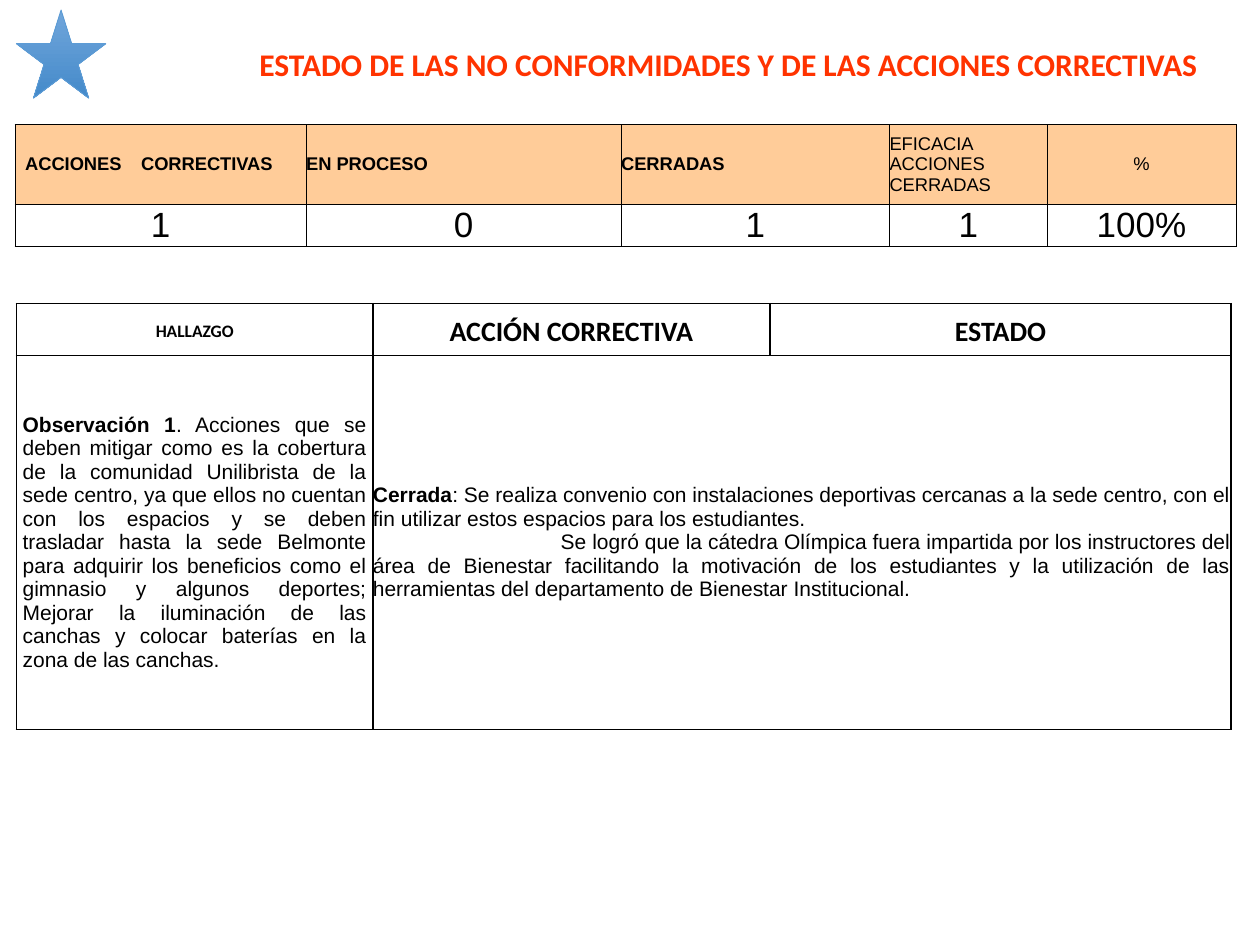
from lxml import etree
from pptx import Presentation
from pptx import util as u
from pptx.dml.color import RGBColor
from pptx.enum import shapes, text
from pptx.oxml.ns import qn

COLORS = {
    "black": "000000", "white": "FFFFFF", "title": "FF3300",
    "header": "FFCC99", "star_top": "71A6DB", "star_bottom": "448ACA",
    "star_line": "5B9BD5",
}
LEFT, CENTER, JUSTIFY = (text.PP_ALIGN.LEFT, text.PP_ALIGN.CENTER,
                         text.PP_ALIGN.JUSTIFY)
MIDDLE = text.MSO_ANCHOR.MIDDLE

SUMMARY = [
    ("ACCIONES\tCORRECTIVAS", "1"),
    ("EN PROCESO", "0"),
    ("CERRADAS", "1"),
    ("EFICACIA ACCIONES CERRADAS", "1"),
    ("%", "100%"),
]
HEADINGS = [("HALLAZGO", 10), ("ACCIÓN CORRECTIVA", 16), ("ESTADO", 16)]
FINDING = (
    ". Acciones que se deben mitigar como es la cobertura de la comunidad "
    "Unilibrista de la sede centro, ya que ellos no cuentan con los espacios "
    "y se deben trasladar hasta la sede Belmonte para adquirir los beneficios "
    "como el gimnasio y algunos deportes; Mejorar la iluminación de las "
    "canchas y colocar baterías en la zona de las canchas.")
CLOSED = (
    ": Se realiza convenio con instalaciones deportivas cercanas a la sede "
    "centro, con el fin utilizar estos espacios para los estudiantes.")
RESULT = (
    "Se logró que la cátedra Olímpica fuera impartida por los instructores "
    "del área de Bienestar facilitando la motivación de los estudiantes y la "
    "utilización de las herramientas del departamento de Bienestar "
    "Institucional.")


def rgb(name):
    return RGBColor.from_string(COLORS[name])


def set_font(font, size, name="Arial", bold=False, color="black"):
    font.size, font.name, font.bold = u.Pt(size), name, bold
    font.color.rgb = rgb(color)


def write(p, content, size, align=LEFT, **style):
    p.text, p.alignment = content, align
    set_font(p.font, size, **style)


def write_labelled(p, label, content, size):
    """Bold label followed by plain text, justified."""
    p.alignment = JUSTIFY
    for part, bold in ((label, True), (content, False)):
        r = p.add_run()
        r.text = part
        set_font(r.font, size, bold=bold)


def add_tab(p, inches):
    tabs = etree.SubElement(p._p.get_or_add_pPr(), qn("a:tabLst"))
    etree.SubElement(tabs, qn("a:tab"), pos=str(u.Inches(inches)), algn="l")


def add_borders(cell, width):
    tcPr = cell._tc.get_or_add_tcPr()
    for i, side in enumerate(("lnL", "lnR", "lnT", "lnB")):
        ln = etree.Element(qn("a:" + side), w=str(u.Pt(width)))
        fill = etree.SubElement(ln, qn("a:solidFill"))
        etree.SubElement(fill, qn("a:srgbClr"), val=COLORS["black"])
        tcPr.insert(i, ln)


def add_grid(s, left, top, cols, rows, border):
    """Plain bordered white table with no cell margins."""
    tbl = s.shapes.add_table(
        len(rows), len(cols), u.Inches(left), u.Inches(top),
        u.Inches(sum(cols)), u.Inches(sum(rows))).table
    for items, attr, sizes in ((tbl.columns, "width", cols),
                               (tbl.rows, "height", rows)):
        for item, size in zip(items, sizes):
            setattr(item, attr, u.Inches(size))
    for cell in tbl.iter_cells():
        cell.margin_left = cell.margin_right = 0
        cell.margin_top = cell.margin_bottom = 0
        cell.vertical_anchor = MIDDLE
        cell.fill.solid()
        cell.fill.fore_color.rgb = rgb("white")
        add_borders(cell, border)
    return tbl


def add_title(s):
    sp = s.shapes.add_textbox(u.Inches(1.96), u.Inches(0.28),
                              u.Inches(8.04), u.Inches(0.5))
    tf = sp.text_frame
    tf.word_wrap, tf.vertical_anchor = True, MIDDLE
    p = tf.paragraphs[0]
    write(p, "ESTADO DE LAS NO CONFORMIDADES Y DE LAS ACCIONES CORRECTIVAS",
          18, name="Calibri", bold=True, color="title")
    p.line_spacing = 0.9


def add_findings(s):
    tbl = add_grid(s, 0.13, 2.41, [2.83, 3.15, 3.66], [0.41, 2.97], 1)
    for c, (heading, size) in enumerate(HEADINGS):
        p = tbl.cell(0, c).text_frame.paragraphs[0]
        write(p, heading, size, CENTER, name="Calibri", bold=True)
        p.line_spacing = 1.15
        if c:
            p.space_after = u.Pt(10)

    finding, status = tbl.cell(1, 0), tbl.cell(1, 1)
    finding.margin_left = finding.margin_right = u.Inches(0.05)
    write_labelled(finding.text_frame.paragraphs[0],
                   "Observación 1", FINDING, 12)

    status.merge(tbl.cell(1, 2))
    tf = status.text_frame
    write_labelled(tf.paragraphs[0], "Cerrada", CLOSED, 12)
    p = tf.add_paragraph()
    write(p, RESULT, 12, JUSTIFY)
    p._p.get_or_add_pPr().set("indent", str(u.Inches(1.49)))


def add_summary(s):
    tbl = add_grid(s, 0.12, 0.99, [2.31, 2.5, 2.13, 1.25, 1.5],
                   [0.63, 0.31], 0.5)
    for c, (heading, value) in enumerate(SUMMARY):
        head = tbl.cell(0, c)
        head.fill.fore_color.rgb = rgb("header")
        p = head.text_frame.paragraphs[0]
        if "\t" in heading:
            head.margin_left = u.Inches(0.08)
            add_tab(p, 0.92)
        write(p, heading, 10.5, CENTER if heading == "%" else LEFT,
              bold=c < 3)
        write(tbl.cell(1, c).text_frame.paragraphs[0], value, 20, CENTER)


def add_star(s):
    sp = s.shapes.add_shape(shapes.MSO_SHAPE.STAR_5_POINT, u.Inches(0.13),
                            u.Inches(0.08), u.Inches(0.71), u.Inches(0.7))
    sp.shadow.inherit = False
    sp.fill.gradient()
    sp.fill.gradient_angle = 270
    for stop, name in zip(sp.fill.gradient_stops, ("star_top", "star_bottom")):
        stop.color.rgb = rgb(name)
    sp.line.color.rgb = rgb("star_line")
    sp.line.width = u.Pt(0.5)


def main():
    prs = Presentation()
    prs.slide_width, prs.slide_height = u.Inches(10), u.Inches(7.5)
    s = prs.slides.add_slide(prs.slide_layouts[6])
    add_title(s)
    add_findings(s)
    add_summary(s)
    add_star(s)
    prs.save("out.pptx")


if __name__ == "__main__":
    main()
